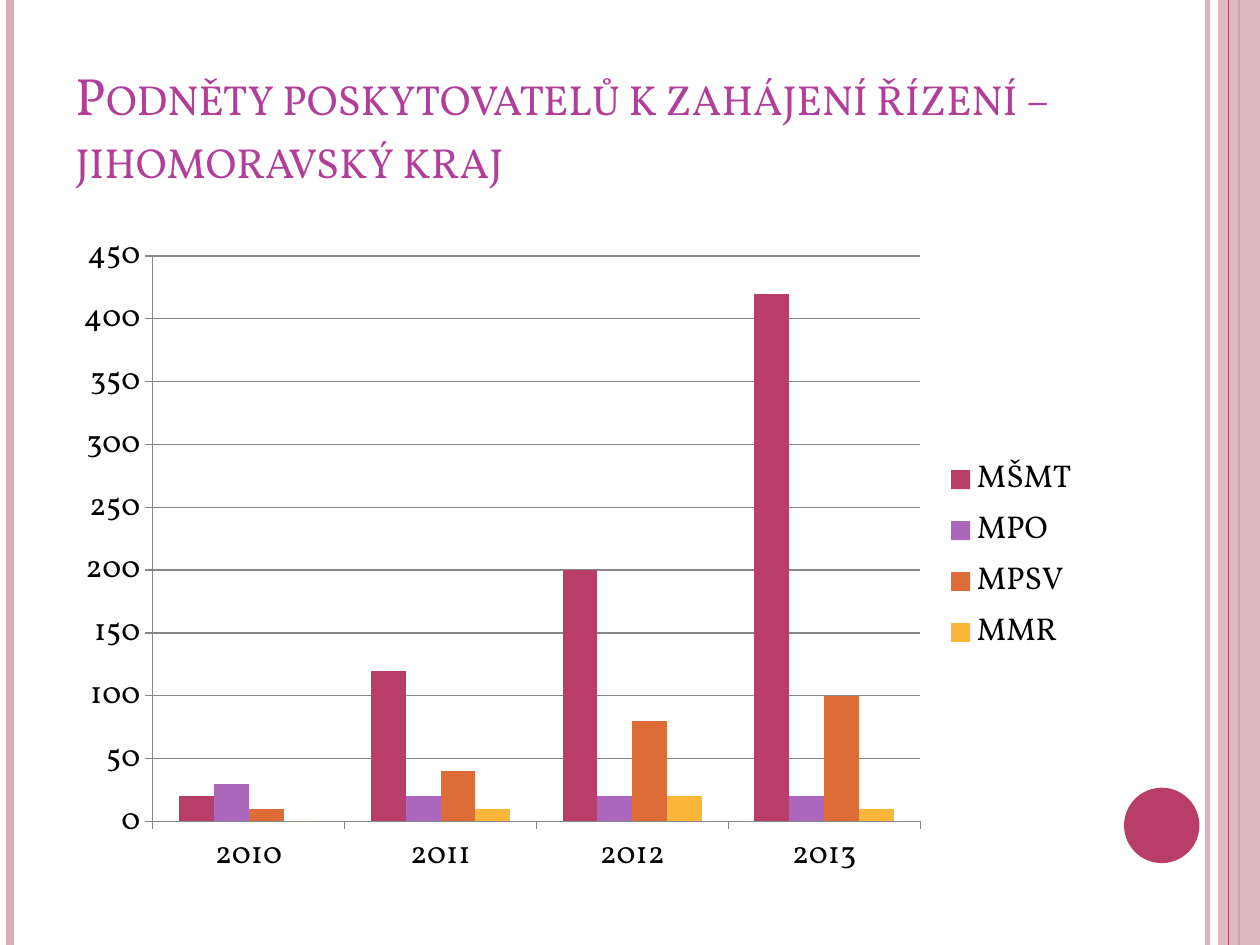
import pptx
import pptx.chart.data
import pptx.dml.color
import pptx.enum.chart
import pptx.enum.shapes
import pptx.enum.text
import pptx.oxml.ns
import pptx.util
from lxml import etree

Cm, Pt = pptx.util.Cm, pptx.util.Pt
qn = pptx.oxml.ns.qn

WIDTH, HEIGHT = Cm(25.4), Cm(19.05)
FONT = "Vollkorn"
COLORS = {
    "title": "B13F9A", "text": "000000", "grid": "878787",
    "pale": "D8AFB9", "rose": "B83D68",
    "MŠMT": "B83D68", "MPO": "AC66BB", "MPSV": "DE6C36", "MMR": "F9B639",
}
YEARS = ["2010", "2011", "2012", "2013"]
PROPOSALS = {
    "MŠMT": [20, 120, 200, 420],
    "MPO": [30, 20, 20, 20],
    "MPSV": [10, 40, 80, 100],
    "MMR": [0, 10, 20, 10],
}


def rgb(name):
    return pptx.dml.color.RGBColor.from_string(COLORS[name])


def set_formats(target, formats):
    for attribute, value in formats.items():
        setattr(target, attribute, value)


def set_font(font, color, size):
    set_formats(font, {"name": FONT, "size": Pt(size)})
    font.color.rgb = rgb(color)


def set_line(line, color, weight):
    line.color.rgb = rgb(color)
    line.width = Pt(weight)


def set_opacity(shape, percent):
    color = next(shape.element.iter(qn("a:srgbClr")))
    etree.SubElement(color, qn("a:alpha"), val=str(percent * 1000))


def add_stripe(slide, x, color, weight, opacity=100):
    """Vertical line over the full slide height."""
    stripe = slide.shapes.add_connector(
        pptx.enum.shapes.MSO_CONNECTOR.STRAIGHT, x, 0, x, HEIGHT)
    set_line(stripe.line, color, weight)
    if opacity < 100:
        set_opacity(stripe, opacity)
    etree.SubElement(stripe.element.spPr, qn("a:effectLst"))


def add_plain_shape(slide, kind, box, color, opacity=100):
    shape = slide.shapes.add_shape(kind, *box)
    shape.shadow.inherit = False
    shape.fill.solid()
    shape.fill.fore_color.rgb = rgb(color)
    shape.line.fill.background()
    if opacity < 100:
        set_opacity(shape, opacity)


def add_decoration(slide):
    kinds = pptx.enum.shapes.MSO_SHAPE
    add_stripe(slide, Cm(24.34), "pale", 3, 93)
    add_stripe(slide, Cm(0.21), "pale", 4.5)
    add_stripe(slide, Cm(24.98), "rose", 1.5)
    band_left = Cm(24.55)
    add_plain_shape(slide, kinds.RECTANGLE,
                    (band_left, 0, WIDTH - band_left, HEIGHT), "pale", 87)
    add_stripe(slide, Cm(24.76), "rose", 0.75)
    add_plain_shape(slide, kinds.OVAL,
                    (Cm(22.66), Cm(15.88), Cm(1.52), Cm(1.52)), "rose")


def fill_title(slide, wording):
    title = slide.shapes.title
    set_formats(title, {"left": Cm(1.27), "top": Cm(0.76),
                        "width": Cm(20.75), "height": Cm(3.18)})
    frame = title.text_frame
    set_formats(frame, {
        "word_wrap": True,
        "auto_size": pptx.enum.text.MSO_AUTO_SIZE.NONE,
        "vertical_anchor": pptx.enum.text.MSO_ANCHOR.BOTTOM,
    })
    paragraph = frame.paragraphs[0]
    paragraph.alignment = pptx.enum.text.PP_ALIGN.LEFT
    run = paragraph.add_run()
    run.text = wording
    set_font(run.font, "title", 30)
    next(paragraph._p.iter(qn("a:rPr"))).set("cap", "small")


def style_axis(axis):
    tick = pptx.enum.chart.XL_TICK_MARK
    set_formats(axis, {"major_tick_mark": tick.OUTSIDE,
                       "minor_tick_mark": tick.NONE})
    set_line(axis.format.line, "grid", 0.75)


def add_proposals_chart(slide):
    data = pptx.chart.data.CategoryChartData()
    data.categories = YEARS
    for ministry, counts in PROPOSALS.items():
        data.add_series(ministry, counts)
    chart = slide.shapes.add_chart(
        pptx.enum.chart.XL_CHART_TYPE.COLUMN_CLUSTERED,
        Cm(1.27), Cm(4.44), Cm(20.75), Cm(13.54), data).chart
    set_font(chart.font, "text", 18)
    set_formats(chart, {"has_title": False, "has_legend": True})
    set_formats(chart.legend, {
        "position": pptx.enum.chart.XL_LEGEND_POSITION.RIGHT,
        "include_in_layout": False,
    })

    plot = chart.plots[0]
    set_formats(plot, {"gap_width": 150, "overlap": 0,
                       "vary_by_categories": False})
    for series in plot.series:
        series.format.fill.solid()
        series.format.fill.fore_color.rgb = rgb(series.name)

    counts_axis = chart.value_axis
    for axis in (chart.category_axis, counts_axis):
        style_axis(axis)
    set_formats(counts_axis, {"minimum_scale": 0, "maximum_scale": 450,
                              "major_unit": 50, "has_major_gridlines": True})
    set_line(counts_axis.major_gridlines.format.line, "grid", 0.75)


def main():
    deck = pptx.Presentation()
    set_formats(deck, {"slide_width": WIDTH, "slide_height": HEIGHT})
    slide = deck.slides.add_slide(deck.slide_layouts.get_by_name("Title Only"))
    add_decoration(slide)
    fill_title(slide, "Podněty poskytovatelů k zahájení řízení – jihomoravský kraj")
    add_proposals_chart(slide)
    deck.save("out.pptx")


if __name__ == "__main__":
    main()
